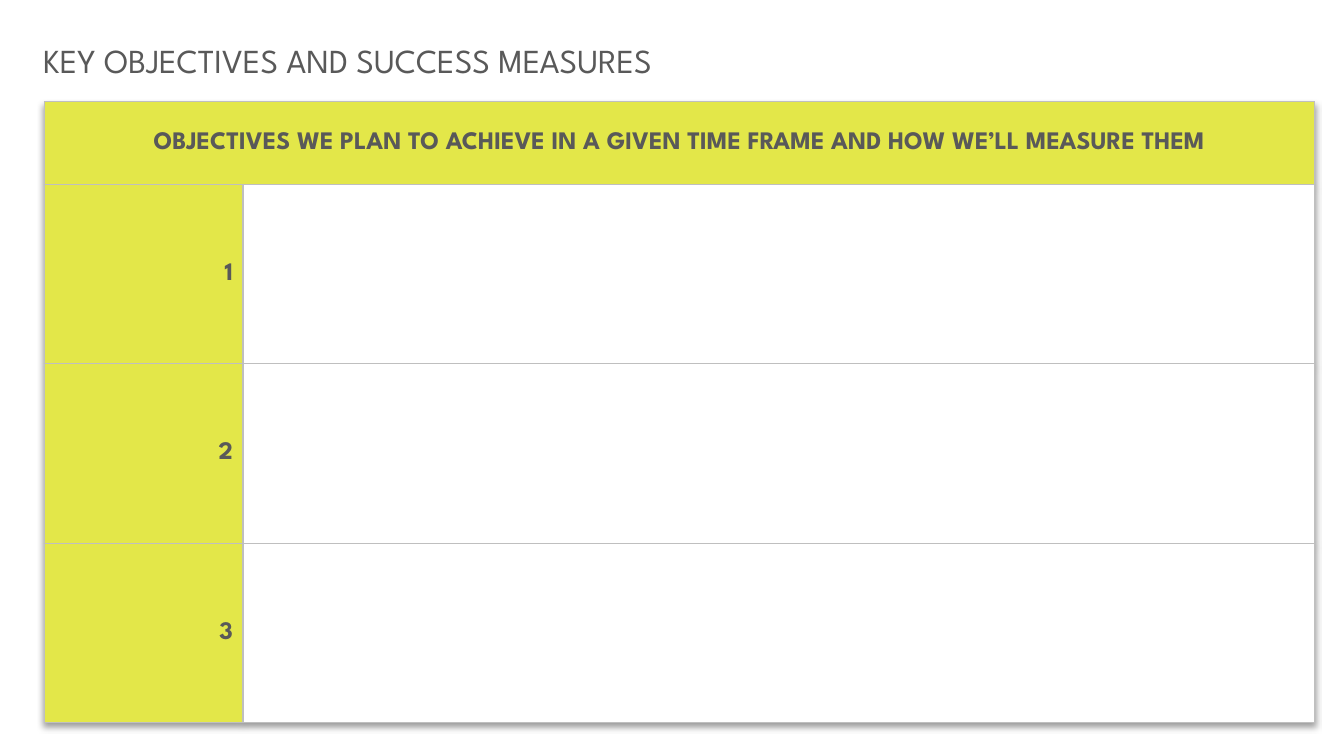
from lxml.etree import SubElement
from pptx import Presentation
from pptx.dml.color import RGBColor
from pptx.enum.text import MSO_ANCHOR, PP_ALIGN
from pptx.oxml import parse_xml
from pptx.oxml.ns import nsdecls, qn
from pptx.util import Inches, Pt

# Content
TITLE = "KEY OBJECTIVES AND SUCCESS MEASURES"
HEADER = "OBJECTIVES WE PLAN TO ACHIEVE IN A GIVEN TIME FRAME AND HOW WE’LL MEASURE THEM"
OBJECTIVES = [("1", ""), ("2", ""), ("3", "")]

# Format and grid, in inches
LIME, WHITE, DARK, GREY = "E3E749", "FFFFFF", "595959", "BFBFBF"
TITLE_FONT = {"name": "League Spartan", "size": Pt(24), "bold": False}
TABLE_FONT = {"name": "League Spartan", "size": Pt(18), "bold": True}
TITLE_BOX = (0.33, 0.35, 8.08, 0.5)
TABLE_LEFT, TABLE_TOP = 0.44, 1.01
COLUMNS = [1.97, 10.63]
ROWS = [0.82] + [1.78] * len(OBJECTIVES)


def color(value):
    return RGBColor.from_string(value)


def write(frame, text, font, alignment):
    paragraph = frame.paragraphs[0]
    paragraph.alignment = alignment
    run = paragraph.add_run()
    run.text = text
    for name, value in font.items():
        setattr(run.font, name, value)
    run.font.color.rgb = color(DARK)


def style_cell(cell, fill):
    cell.vertical_anchor = MSO_ANCHOR.MIDDLE
    properties = cell._tc.get_or_add_tcPr()
    # Borders precede the fill in the cell properties
    for side in ("lnL", "lnR", "lnT", "lnB"):
        line = SubElement(properties, qn(f"a:{side}"), w=str(Pt(1)))
        solid = SubElement(line, qn("a:solidFill"))
        SubElement(solid, qn("a:srgbClr"), val=GREY)
    cell.fill.solid()
    cell.fill.fore_color.rgb = color(fill)


def add_shadow(table):
    table._tbl.tblPr.insert(0, parse_xml(
        f'<a:effectLst {nsdecls("a")}>'
        '<a:outerShdw blurRad="50800" dist="38100" dir="5400000" algn="t" rotWithShape="0">'
        '<a:srgbClr val="000000"><a:alpha val="40000"/></a:srgbClr>'
        '</a:outerShdw></a:effectLst>'))


def main():
    presentation = Presentation()
    presentation.slide_width, presentation.slide_height = Inches(13.33), Inches(7.5)
    slide = presentation.slides.add_slide(presentation.slide_layouts[6])

    # Title
    title = slide.shapes.add_textbox(*map(Inches, TITLE_BOX))
    title.text_frame.word_wrap = True
    write(title.text_frame, TITLE, TITLE_FONT, PP_ALIGN.LEFT)

    # Objectives table
    box = (TABLE_LEFT, TABLE_TOP, sum(COLUMNS), sum(ROWS))
    table = slide.shapes.add_table(len(ROWS), len(COLUMNS), *map(Inches, box)).table
    table.first_row = table.horz_banding = False
    add_shadow(table)
    for column, width in zip(table.columns, COLUMNS):
        column.width = Inches(width)
    for row, height in zip(table.rows, ROWS):
        row.height = Inches(height)
    for index, cell in enumerate(table.iter_cells()):
        row, column = divmod(index, len(COLUMNS))
        style_cell(cell, WHITE if row and column else LIME)

    # Header and numbered rows
    table.cell(0, 0).merge(table.cell(0, len(COLUMNS) - 1))
    write(table.cell(0, 0).text_frame, HEADER, TABLE_FONT, PP_ALIGN.CENTER)
    for row, (number, objective) in enumerate(OBJECTIVES, start=1):
        write(table.cell(row, 0).text_frame, number, TABLE_FONT, PP_ALIGN.RIGHT)
        if objective:
            write(table.cell(row, 1).text_frame, objective, TABLE_FONT, PP_ALIGN.LEFT)

    presentation.save("out.pptx")


if __name__ == "__main__":
    main()
